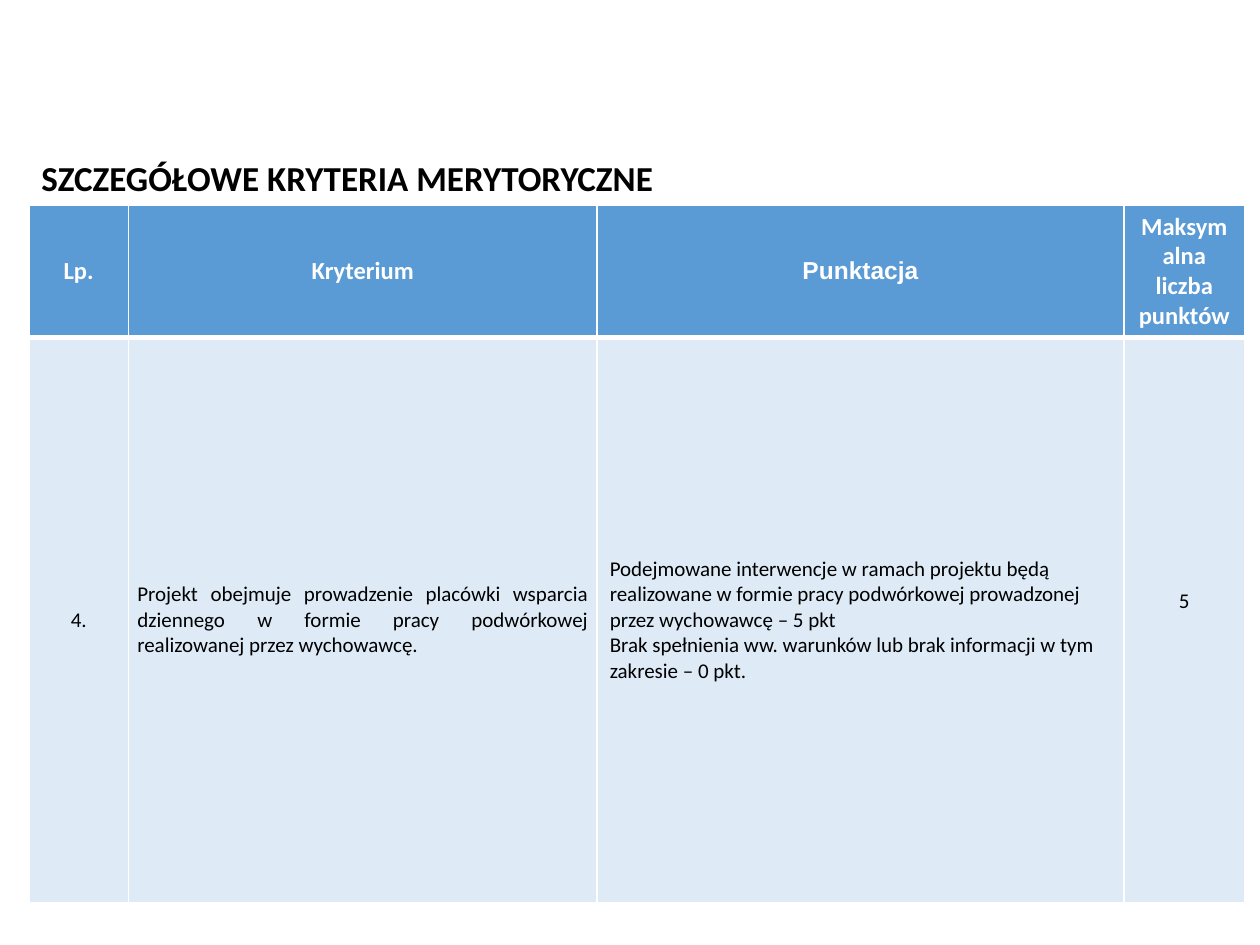
from lxml import etree
from pptx import Presentation
from pptx.dml.color import RGBColor
from pptx.enum.text import MSO_ANCHOR, PP_ALIGN
from pptx.oxml.ns import qn
from pptx.util import Inches, Pt

WHITE = RGBColor(0xFF, 0xFF, 0xFF)
BLACK = RGBColor(0x00, 0x00, 0x00)
BLUE = RGBColor(0x5B, 0x9B, 0xD5)
PALE_BLUE = RGBColor(0xDE, 0xEB, 0xF7)


def set_borders(cell, widths):
    """Draw white cell borders; widths maps side letters to points."""
    tcPr = cell._tc.get_or_add_tcPr()
    for side, width in widths.items():
        ln = etree.SubElement(tcPr, qn("a:ln" + side), w=str(Pt(width)))
        fill = etree.SubElement(ln, qn("a:solidFill"))
        etree.SubElement(fill, qn("a:srgbClr"), val=str(WHITE))


def format_text(tf, size, color, bold, align, font="Calibri"):
    for p in tf.paragraphs:
        p.alignment = align
        for r in p.runs:
            r.font.name = font
            r.font.size = Pt(size)
            r.font.bold = bold
            r.font.color.rgb = color


prs = Presentation()
prs.slide_width, prs.slide_height = Inches(10), Inches(7.5)
s = prs.slides.add_slide(prs.slide_layouts[6])

# Criteria table
col_widths = [0.79, 3.72, 4.18, 0.96]
row_heights = [1.03, 4.49]
headers = ["Lp.", "Kryterium", "Punktacja", "Maksymalna liczba punktów"]
values = [
    "4.",
    "Projekt obejmuje prowadzenie placówki wsparcia dziennego w formie pracy "
    "podwórkowej realizowanej przez wychowawcę.",
    "Podejmowane interwencje w ramach projektu będą realizowane w formie pracy "
    "podwórkowej prowadzonej przez wychowawcę – 5 pkt\n"
    "Brak spełnienia ww. warunków lub brak informacji w tym zakresie – 0 pkt.",
    "5",
]
aligns = [PP_ALIGN.CENTER, PP_ALIGN.JUSTIFY, PP_ALIGN.LEFT, PP_ALIGN.CENTER]

table = s.shapes.add_table(2, 4, Inches(0.23), Inches(1.63),
                           Inches(sum(col_widths)), Inches(sum(row_heights))).table
for column, width in zip(table.columns, col_widths):
    column.width = Inches(width)
for row, height in zip(table.rows, row_heights):
    row.height = Inches(height)

for i, (header, value, align) in enumerate(zip(headers, values, aligns)):
    head, body = table.cell(0, i), table.cell(1, i)
    set_borders(head, {"L": 1, "R": 1, "T": 1, "B": 3})
    set_borders(body, {"L": 1, "R": 1, "T": 3, "B": 1})
    for cell, text, color in ((head, header, BLUE), (body, value, PALE_BLUE)):
        cell.fill.solid()
        cell.fill.fore_color.rgb = color
        cell.vertical_anchor = MSO_ANCHOR.MIDDLE
        cell.text_frame.text = text
    format_text(head.text_frame, 14, WHITE, True, PP_ALIGN.CENTER,
                "Arial" if header == "Punktacja" else "Calibri")
    format_text(body.text_frame, 12, BLACK, False, align)

# Tighter margins for the criterion, raised score
criterion, score = table.cell(1, 1), table.cell(1, 3)
criterion.margin_left = criterion.margin_right = Inches(0.07)
criterion.margin_top = criterion.margin_bottom = 0
score.margin_bottom = Inches(0.35)

# Heading
sp = s.shapes.add_textbox(Inches(0.23), Inches(1.19), Inches(9.35), Inches(0.44))
tf = sp.text_frame
tf.word_wrap = True
tf.vertical_anchor = MSO_ANCHOR.MIDDLE
tf.text = "SZCZEGÓŁOWE KRYTERIA MERYTORYCZNE"
format_text(tf, 20, BLACK, True, PP_ALIGN.LEFT)

prs.save("out.pptx")
